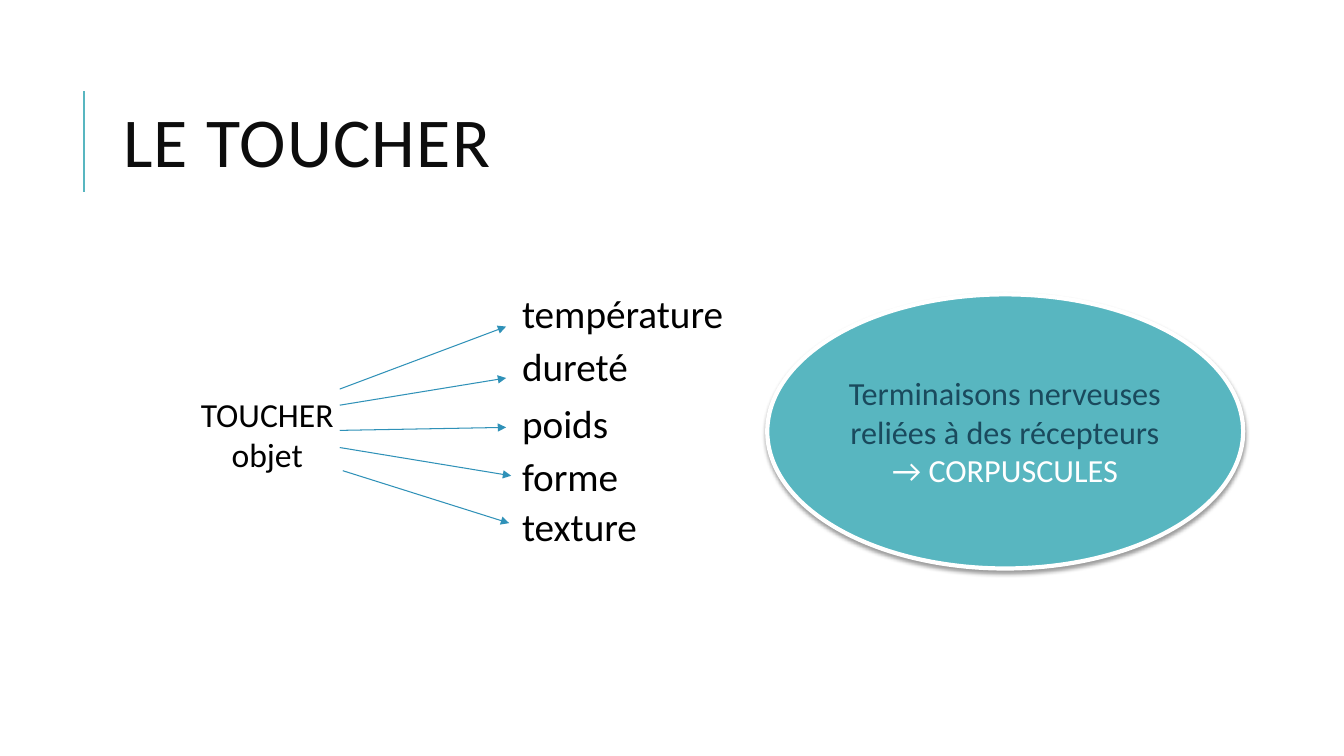
from lxml.etree import SubElement
from pptx import Presentation
from pptx.dml.color import RGBColor
from pptx.enum.shapes import MSO_CONNECTOR, MSO_SHAPE
from pptx.enum.text import MSO_ANCHOR, MSO_AUTO_SIZE, PP_ALIGN
from pptx.oxml.ns import qn
from pptx.util import Inches, Pt

COLORS = {"teal": "58B6C0", "blue": "2F91B8", "navy": "1A4A5D",
          "title": "0D0D0D", "black": "000000", "white": "FFFFFF"}
PROPERTIES = [("température", 2.82), ("dureté", 3.35), ("poids", 3.91),
              ("forme", 4.44), ("texture", 4.93)]
ARROWS = [(3.37, 3.86, 5.02, 3.24), (3.37, 4.02, 5.02, 3.75),
          (3.37, 4.27, 5.02, 4.24), (3.37, 4.44, 5.07, 4.72),
          (3.4, 4.67, 5.05, 5.19)]


class SlideBuilder:
    """Draws styled elements on one title-only slide."""

    def __init__(self, prs, font="Calibri"):
        self.s = prs.slides.add_slide(prs.slide_layouts[5])
        self.font = font

    def color(self, name):
        return RGBColor.from_string(COLORS[name])

    def place(self, sp, box):
        sp.left, sp.top, sp.width, sp.height = map(Inches, box)

    def add_lines(self, tf, lines, size, align=PP_ALIGN.LEFT, anchor=MSO_ANCHOR.TOP):
        tf.word_wrap = True
        tf.vertical_anchor = anchor
        for i, (text, color) in enumerate(lines):
            p = tf.add_paragraph() if i else tf.paragraphs[0]
            p.alignment = align
            r = p.add_run()
            r.text = text
            r.font.name = self.font
            r.font.size = Pt(size)
            r.font.color.rgb = self.color(color)

    def title(self, text, box):
        sp = self.s.shapes.title
        self.place(sp, box)
        tf = sp.text_frame
        self.add_lines(tf, [(text, "title")], 50, anchor=MSO_ANCHOR.MIDDLE)
        tf.auto_size = MSO_AUTO_SIZE.NONE
        p = tf.paragraphs[0]
        p.line_spacing = 0.8
        p.runs[0]._r.get_or_add_rPr().set("spc", "90")

    def text(self, lines, box, size, align=PP_ALIGN.LEFT):
        tf = self.s.shapes.add_textbox(*map(Inches, box)).text_frame
        self.add_lines(tf, [(line, "black") for line in lines], size, align)
        tf.auto_size = MSO_AUTO_SIZE.SHAPE_TO_FIT_TEXT

    def line(self, ends, color, width, arrow=False):
        sp = self.s.shapes.add_connector(MSO_CONNECTOR.STRAIGHT, *map(Inches, ends))
        sp.line.color.rgb = self.color(color)
        sp.line.width = Pt(width)
        spPr = sp._element.spPr
        if arrow:
            SubElement(spPr.find(qn("a:ln")), qn("a:tailEnd"), type="triangle")
        SubElement(spPr, qn("a:effectLst"))

    def ellipse(self, lines, box, size):
        sp = self.s.shapes.add_shape(MSO_SHAPE.OVAL, *map(Inches, box))
        sp.fill.solid()
        sp.fill.fore_color.rgb = self.color("teal")
        sp.line.color.rgb = self.color("white")
        sp.line.width = Pt(3)
        sp.shadow.inherit = False
        effects = sp._element.spPr.find(qn("a:effectLst"))
        shadow = SubElement(effects, qn("a:outerShdw"), blurRad=str(Pt(3.1)),
                            dist=str(Pt(1.6)), dir="5400000", rotWithShape="0")
        tint = SubElement(shadow, qn("a:srgbClr"), val=COLORS["black"])
        SubElement(tint, qn("a:alpha"), val="38000")
        self.add_lines(sp.text_frame, lines, size, PP_ALIGN.CENTER, MSO_ANCHOR.MIDDLE)


def main():
    prs = Presentation()
    prs.slide_width, prs.slide_height = Inches(13.33), Inches(7.5)
    b = SlideBuilder(prs)
    b.line((0.83, 1.9, 0.83, 0.9), "teal", 1.5)
    b.title("LE TOUCHER", (1.12, 0.64, 10.63, 1.64))
    for ends in ARROWS:
        b.line(ends, "blue", 0.75, arrow=True)
    b.text(["TOUCHER", "objet"], (1.36, 3.86, 2.58, 0.9), 24, PP_ALIGN.CENTER)
    for name, top in PROPERTIES:
        b.text([name], (5.08, top, 4.23, 0.56), 28)
    b.ellipse([("Terminaisons nerveuses reliées à des récepteurs", "navy"),
               ("→ CORPUSCULES", "white")], (7.61, 2.92, 4.72, 2.72), 23)
    prs.save("out.pptx")


if __name__ == "__main__":
    main()
